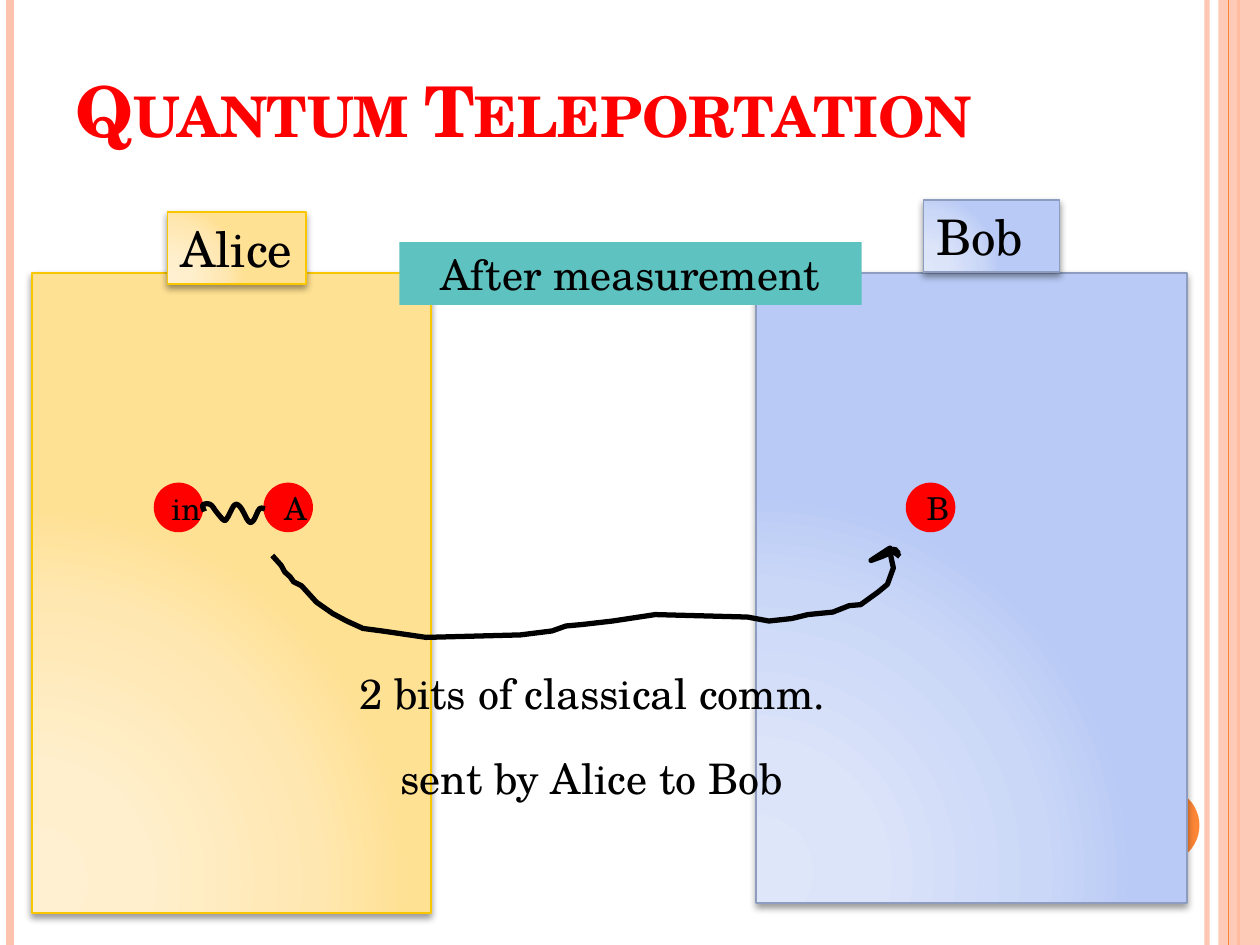
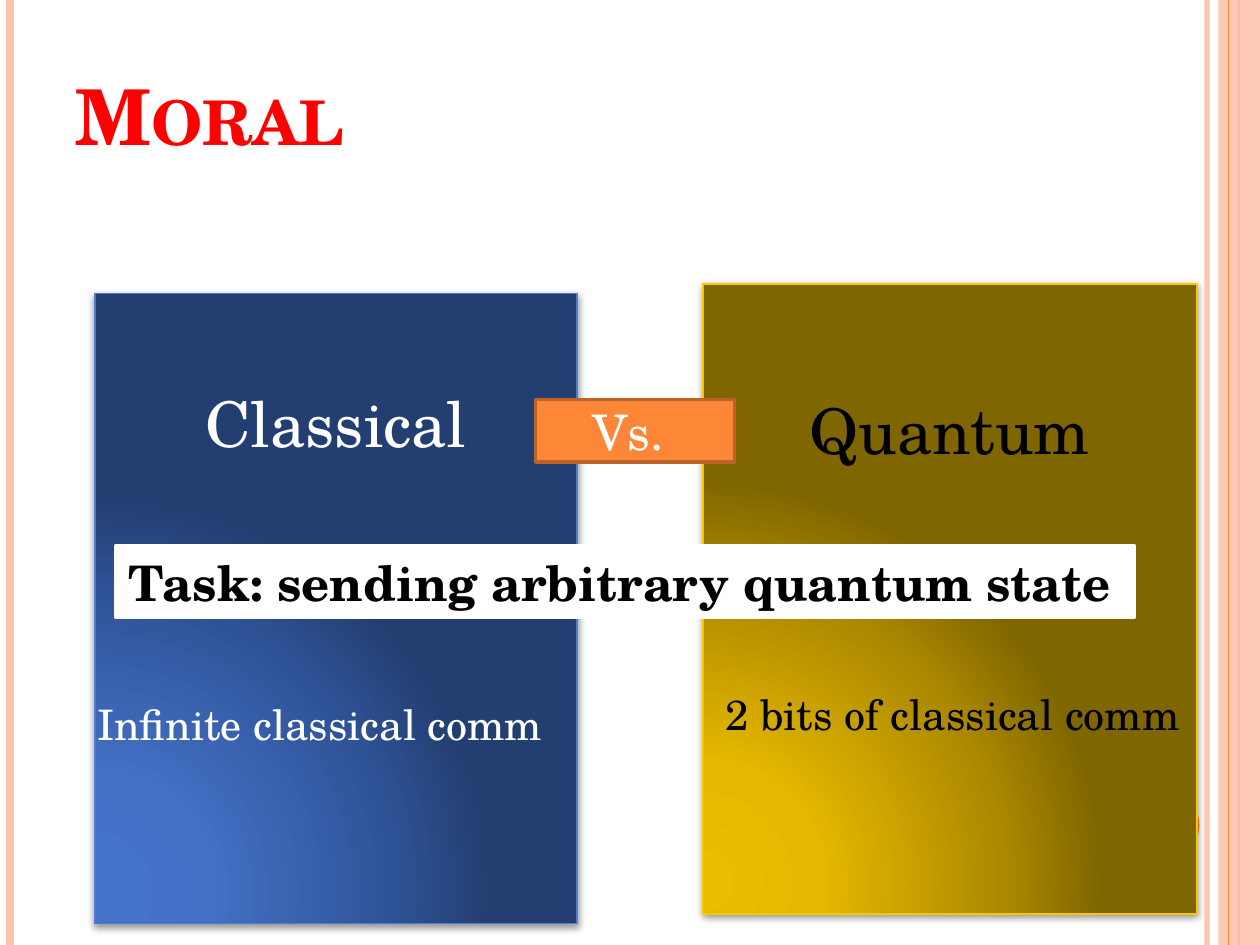
from collections import namedtuple

from pptx import Presentation
from pptx.dml.color import RGBColor as RGB
from pptx.enum.shapes import MSO_CONNECTOR, MSO_SHAPE as SHAPE
from pptx.enum.text import MSO_ANCHOR as ANCHOR, MSO_AUTO_SIZE as AUTO, PP_ALIGN as ALIGN
from pptx.oxml import parse_xml
from pptx.oxml.ns import nsdecls, qn
from pptx.util import Cm, Pt

FONT = "TeX Gyre Schola"
BLACK = RGB(0x00, 0x00, 0x00)
WHITE = RGB(0xFF, 0xFF, 0xFF)
RED = RGB(0xFF, 0x00, 0x00)
PEACH = RGB(0xFE, 0xC3, 0xAE)
ORANGE = RGB(0xFE, 0x86, 0x37)
RUST = RGB(0xBC, 0x63, 0x29)
TEAL = RGB(0x5E, 0xC2, 0xC0)
GOLD = RGB(0xF8, 0xC7, 0x00)
SLATE = RGB(0x8D, 0x9C, 0xBF)
BLUE = RGB(0x4F, 0x7C, 0xCF)

Box = namedtuple("Box", "x y w h")
Style = namedtuple("Style", "stops line shadow_alpha shadow_dist")

STOP_POSITIONS = (0, 30, 75, 100)
PALE_GOLD = Style(
    (RGB(0xFF, 0xF0, 0xD1), RGB(0xFF, 0xEF, 0xCC), RGB(0xFF, 0xE7, 0xB1), RGB(0xFF, 0xE1, 0x93)),
    GOLD, 40, 2)
PALE_BLUE = Style(
    (RGB(0xDE, 0xE6, 0xFA), RGB(0xDB, 0xE4, 0xF9), RGB(0xCA, 0xD7, 0xF7), RGB(0xB8, 0xCA, 0xF5)),
    SLATE, 40, 2)
DEEP_BLUE = Style(
    (RGB(0x45, 0x74, 0xCC), RGB(0x43, 0x70, 0xC5), RGB(0x2F, 0x53, 0x97), RGB(0x23, 0x3E, 0x70)),
    BLUE, 42, 1.6)
DEEP_GOLD = Style(
    (RGB(0xED, 0xBE, 0x00), RGB(0xE5, 0xB7, 0x00), RGB(0xAC, 0x89, 0x00), RGB(0x7F, 0x66, 0x00)),
    GOLD, 42, 1.6)

PAGE = Box(0, 0, 25.4, 19.05)
QUBIT_SIZE = 1.0

SQUIGGLE = [
    (0.08, 0.18), (0.05, 0.05), (0.2, 0.04), (0.33, 0.2), (0.48, 0.36), (0.56, 0.28),
    (0.69, 0.05), (0.81, 0.1), (0.97, 0.38), (1.07, 0.36), (1.19, 0.13), (1.3, 0.13)]
MESSAGE_ARROW = [
    (0.05, 0.18), (0.23, 0.38), (0.3, 0.51), (0.41, 0.61), (0.48, 0.71), (0.64, 0.79),
    (0.94, 1.12), (1.27, 1.35), (1.55, 1.5), (1.88, 1.65), (2.26, 1.7), (3.15, 1.83),
    (5.05, 1.78), (5.69, 1.7), (5.97, 1.6), (6.3, 1.57), (6.91, 1.5), (7.77, 1.37),
    (9.63, 1.42), (10.06, 1.5), (10.52, 1.45), (10.85, 1.37), (11.35, 1.32), (11.68, 1.19),
    (11.91, 1.17), (12.09, 1.04), (12.27, 0.91), (12.45, 0.76), (12.57, 0.43), (12.52, 0.2),
    (12.5, 0.1), (12.6, 0.05), (12.67, 0.13), (12.57, 0.1), (12.5, 0.03), (12.24, 0.2),
    (12.12, 0.28), (12.34, 0.2), (12.57, 0.1), (12.7, 0.2)]


def within(box, x, y, w, h):
    return Box(box.x + x, box.y + y, w, h)


def emu(box):
    return [Cm(v) for v in box]


def write(sp, text, size, color=BLACK, bold=False, align=ALIGN.LEFT, wrap=True):
    tf = sp.text_frame
    tf.word_wrap = wrap
    tf.auto_size = AUTO.NONE
    p = tf.paragraphs[0]
    p.text = text
    p.alignment = align
    p.font.name = FONT
    p.font.size = Pt(size)
    p.font.bold = bold
    p.font.color.rgb = color
    return p


def add_shape(shapes, kind, box, fill=None, line=None, width=1):
    sp = shapes.add_shape(kind, *emu(box))
    sp.shadow.inherit = False
    if fill is not None:
        sp.fill.solid()
        sp.fill.fore_color.rgb = fill
    if line is None:
        sp.line.fill.background()
    else:
        sp.line.color.rgb = line
        sp.line.width = Pt(width)
    return sp


def add_panel(shapes, box, style):
    sp = add_shape(shapes, SHAPE.RECTANGLE, box, line=style.line)
    stops = "".join(
        f'<a:gs pos="{pos * 1000}"><a:srgbClr val="{color}"/></a:gs>'
        for pos, color in zip(STOP_POSITIONS, style.stops))
    spPr = sp._element.spPr
    spPr.find(qn("a:prstGeom")).addnext(parse_xml(
        f'<a:gradFill {nsdecls("a")} rotWithShape="1"><a:gsLst>{stops}</a:gsLst>'
        '<a:path path="circle"><a:fillToRect l="5000" t="100000" r="120000" b="10000"/>'
        '</a:path></a:gradFill>'))
    spPr.find(qn("a:effectLst")).append(parse_xml(
        f'<a:outerShdw {nsdecls("a")} blurRad="{Pt(4)}" dist="{Pt(style.shadow_dist)}" '
        'dir="5400000" rotWithShape="0"><a:srgbClr val="000000">'
        f'<a:alpha val="{style.shadow_alpha * 1000}"/></a:srgbClr></a:outerShdw>'))
    return sp


def add_label(shapes, box, text, size, color=BLACK):
    sp = shapes.add_textbox(*emu(box))
    write(sp, text, size, color, wrap=False)


def set_alpha(sp, percent):
    color = sp._element.spPr.find(".//" + qn("a:srgbClr"))
    color.append(parse_xml(f'<a:alpha {nsdecls("a")} val="{percent * 1000}"/>'))


def add_rule(shapes, box, x, color, width):
    line = shapes.add_connector(
        MSO_CONNECTOR.STRAIGHT, Cm(box.x + x), Cm(box.y), Cm(box.x + x), Cm(box.y + box.h))
    line.line.color.rgb = color
    line.line.width = Pt(width)
    line._element.spPr.append(parse_xml(f'<a:effectLst {nsdecls("a")}/>'))
    return line


def decorate_layout(layout, slide, box):
    shapes = slide.shapes
    band = add_shape(shapes, SHAPE.RECTANGLE, within(box, 24.56, 0, 0.84, box.h), PEACH)
    set_alpha(band, 87)
    inner_rule = add_rule(shapes, box, 24.33, PEACH, 3)
    set_alpha(inner_rule, 93)
    parts = [
        inner_rule,
        add_rule(shapes, box, 0.21, PEACH, 4.5),
        add_rule(shapes, box, 24.97, ORANGE, 1.5),
        band,
        add_rule(shapes, box, 24.77, ORANGE, 0.75),
        add_shape(shapes, SHAPE.OVAL, within(box, 22.66, 15.88, 1.52, 1.52), ORANGE)]
    for part in parts:
        layout.shapes.element.append(part._element)


def set_title(slide, box, text, size):
    title = slide.shapes.title
    title.left, title.top, title.width, title.height = emu(box)
    title.text_frame.vertical_anchor = ANCHOR.BOTTOM
    p = write(title, text, size, RED, bold=True)
    p._p.pPr.find(qn("a:defRPr")).set("cap", "small")


def smooth(points, steps=5):
    ends = [points[0], *points, points[-1]]
    curve = [points[0]]
    for a, b, c, d in zip(ends, ends[1:], ends[2:], ends[3:]):
        for i in range(1, steps + 1):
            t = i / steps
            curve.append(tuple(
                0.5 * (2 * q + (r - p) * t + (2 * p - 5 * q + 4 * r - s) * t ** 2
                       + (3 * q - p - 3 * r + s) * t ** 3)
                for p, q, r, s in zip(a, b, c, d)))
    return curve


def add_stroke(shapes, x, y, points):
    path = [(Cm(x + px), Cm(y + py)) for px, py in points]
    builder = shapes.build_freeform(*path[0])
    builder.add_line_segments(path[1:], close=False)
    sp = builder.convert_to_shape()
    sp.shadow.inherit = False
    sp.fill.background()
    sp.line.color.rgb = BLACK
    sp.line.width = Pt(3)


def add_lab(shapes, box, style, name, tag_offset, tag_width, qubits):
    add_panel(shapes, box, style)
    for text, x in qubits:
        sp = add_shape(shapes, SHAPE.OVAL, within(box, x, 4.22, QUBIT_SIZE, QUBIT_SIZE), RED)
        write(sp, text, 18, align=ALIGN.CENTER, wrap=False)
        tf = sp.text_frame
        tf.margin_left = Cm(0.3)
        tf.margin_right = tf.margin_top = tf.margin_bottom = 0
    tag = add_panel(shapes, within(box, *tag_offset, tag_width, 1.45), style)
    write(tag, name, 28)


def add_channel(shapes, box):
    sp = add_shape(shapes, SHAPE.RECTANGLE, within(box, 1.06, 0, 9.32, 1.27), TEAL)
    write(sp, "After measurement", 24, align=ALIGN.CENTER)
    add_stroke(shapes, box.x - 2.95, box.y + 5.25, smooth(SQUIGGLE))
    add_stroke(shapes, box.x - 1.55, box.y + 6.14, MESSAGE_ARROW)
    add_label(shapes, within(box, 0, 8.46, 9.98, 1.27), "2 bits of classical comm.", 24)
    add_label(shapes, within(box, 0.83, 10.16, 8.31, 1.27), "sent by Alice to Bob", 24)


def add_side(shapes, box, style, name, name_top, cost, cost_x, color):
    sp = add_panel(shapes, box, style)
    write(sp, name, 36, color, align=ALIGN.CENTER)
    sp.text_frame.vertical_anchor = ANCHOR.TOP
    sp.text_frame.margin_top = Cm(name_top)
    add_label(shapes, within(box, cost_x, 8.04, 9.7, 1.27), cost, 24, color)


def add_comparison(shapes, box):
    add_side(shapes, within(box, 0, 0.2, 9.73, 12.7), DEEP_BLUE, "Classical", 1.83,
             "Infinite classical comm", -0.2, WHITE)
    add_side(shapes, within(box, 12.26, 0, 9.96, 12.7), DEEP_GOLD, "Quantum", 2.18,
             "2 bits of classical comm", 0.2, BLACK)
    versus = add_shape(shapes, SHAPE.RECTANGLE, within(box, 8.89, 2.33, 4.01, 1.27),
                       ORANGE, RUST, 2)
    write(versus, "Vs. ", 28, WHITE, align=ALIGN.CENTER)
    task = add_shape(shapes, SHAPE.RECTANGLE, within(box, 0.43, 5.28, 20.52, 1.45),
                     WHITE, WHITE, 2)
    write(task, "Task: sending arbitrary quantum state", 28, bold=True)


def teleportation_slide(slide):
    set_title(slide, Box(1.27, 0, 20.75, 3.18), "Quantum Teleportation", 40)
    shapes = slide.shapes
    add_lab(shapes, Box(0.64, 5.51, 8.05, 12.9), PALE_GOLD, "Alice", (2.74, -1.24), 2.79,
            [("A", 4.67), ("in", 2.46)])
    add_lab(shapes, Box(15.24, 5.51, 8.69, 12.7), PALE_BLUE, "Bob", (3.38, -1.47), 2.74,
            [("B", 3.02)])
    add_channel(shapes, Box(6.99, 4.88, 10.38, 11.43))


def moral_slide(slide):
    set_title(slide, Box(1.27, 0.2, 20.75, 3.18), "Moral", 44)
    add_comparison(slide.shapes, Box(1.91, 5.72, 22.22, 12.9))


def main():
    prs = Presentation()
    prs.slide_width, prs.slide_height = Cm(PAGE.w), Cm(PAGE.h)
    layout = prs.slide_layouts[5]
    teleportation = prs.slides.add_slide(layout)
    decorate_layout(layout, teleportation, PAGE)
    teleportation_slide(teleportation)
    moral_slide(prs.slides.add_slide(layout))
    prs.save("out.pptx")


if __name__ == "__main__":
    main()
